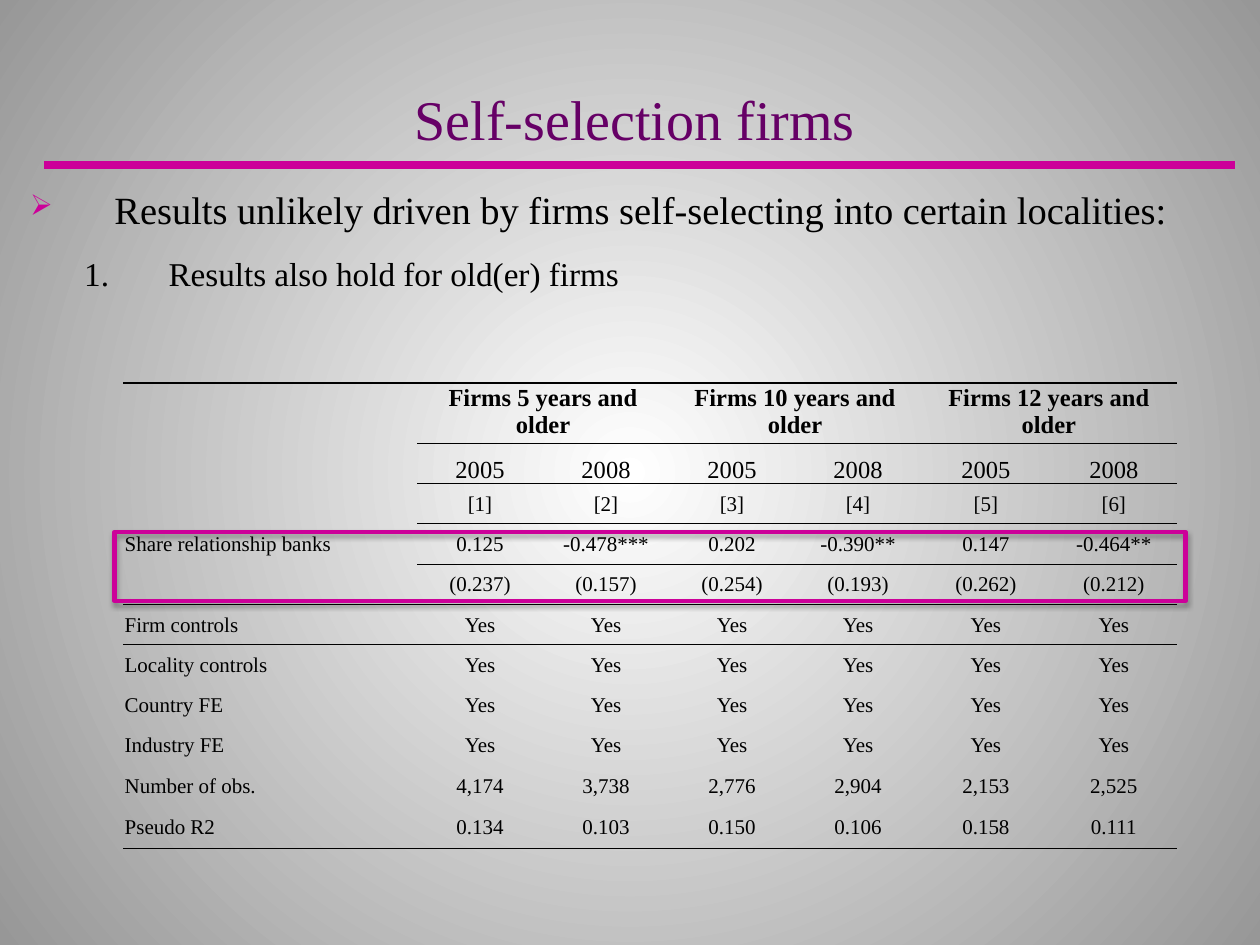
from lxml import etree
from pptx import Presentation
from pptx.dml.color import RGBColor
from pptx.enum.shapes import MSO_CONNECTOR as CONN, MSO_SHAPE as SHAPE
from pptx.enum.text import MSO_ANCHOR as ANCHOR, PP_ALIGN as ALIGN
from pptx.oxml.ns import qn
from pptx.util import Inches, Pt

COLORS = {
    "text": "000000",
    "title": "660066",
    "accent": "CC0099",
    "center": "FFFFFF",
    "edge": "979797",
}
PLAIN_TABLE = "{2D5ABB26-0587-4C30-8999-92F81FD0307C}"


def rgb(name):
    return RGBColor.from_string(COLORS[name])


def sub(parent, tag, **attrs):
    return etree.SubElement(parent, qn(tag), {k: str(v) for k, v in attrs.items()})


def solid(parent, name):
    return sub(sub(parent, "a:solidFill"), "a:srgbClr", val=COLORS[name])


class SlideBuilder:
    """Holds the font and the current slide; one method per kind of element."""

    def __init__(self, slide, font="Times New Roman"):
        self.s = slide
        self.font = font

    def background(self):
        fill = self.s.background.fill
        fill.gradient()
        for stop, name in zip(fill.gradient_stops, ("center", "edge")):
            stop.color.rgb = rgb(name)
        grad = self.s.element.find(".//" + qn("a:gradFill"))
        grad.remove(grad.find(qn("a:lin")))
        circle = sub(grad, "a:path", path="circle")
        sub(circle, "a:fillToRect", l=50000, t=50000, r=50000, b=50000)

    def run(self, p, text, size, color="text", bold=False):
        r = p.add_run()
        r.text = text
        r.font.name = self.font
        r.font.size = Pt(size)
        r.font.bold = bold
        r.font.color.rgb = rgb(color)

    def text_box(self, x, y, w, h, anchor=ANCHOR.TOP):
        sp = self.s.shapes.add_textbox(Inches(x), Inches(y), Inches(w), Inches(h))
        tf = sp.text_frame
        tf.word_wrap = True
        tf.vertical_anchor = anchor
        return tf

    def list_item(self, p, text, size, left, before, after=0, char=None):
        """A hanging item: bulleted when char is given, else numbered."""
        p.line_spacing = 1.1
        p.space_before, p.space_after = Pt(before), Pt(after)
        pPr = p._p.get_or_add_pPr()
        pPr.set("marL", str(Inches(left)))
        pPr.set("indent", str(Inches(-0.67)))
        if char:
            sub(sub(pPr, "a:buClr"), "a:srgbClr", val=COLORS["accent"])
            sub(pPr, "a:buSzPct", val=75000)
            sub(pPr, "a:buChar", char=char)
        else:
            sub(pPr, "a:buAutoNum", type="arabicPeriod")
        self.run(p, text, size)

    def rule(self, x1, y1, x2, y2, width):
        line = self.s.shapes.add_connector(
            CONN.STRAIGHT, Inches(x1), Inches(y1), Inches(x2), Inches(y2))
        line.line.color.rgb = rgb("accent")
        line.line.width = Pt(width)
        sub(line._element.spPr, "a:effectLst")

    def frame(self, x, y, w, h, width):
        sp = self.s.shapes.add_shape(
            SHAPE.RECTANGLE, Inches(x), Inches(y), Inches(w), Inches(h))
        sp.fill.background()
        sp.line.color.rgb = rgb("accent")
        sp.line.width = Pt(width)
        sp.shadow.inherit = False
        effects = sp._element.spPr.find(qn("a:effectLst"))
        shadow = sub(effects, "a:outerShdw", blurRad=Pt(3.1), dist=Pt(1.8),
                     dir=90 * 60000, rotWithShape=0)
        sub(sub(shadow, "a:srgbClr", val=COLORS["text"]), "a:alpha", val=35000)

    def table(self, x, y, widths, heights):
        sp = self.s.shapes.add_table(
            len(heights), len(widths), Inches(x), Inches(y),
            Inches(sum(widths)), Inches(sum(heights)))
        table = sp.table
        table.first_row = table.horz_banding = False
        table._tbl.tblPr.find(qn("a:tableStyleId")).text = PLAIN_TABLE
        for col, w in zip(table.columns, widths):
            col.width = Inches(w)
        for row, h in zip(table.rows, heights):
            row.height = Inches(h)
        return table

    def cell(self, cell, text, size, anchor, align, bold, top, bottom):
        cell.margin_left = cell.margin_right = cell.margin_top = Inches(0.01)
        cell.margin_bottom = 0
        cell.vertical_anchor = anchor
        p = cell.text_frame.paragraphs[0]
        p.alignment = align
        p.font.size = Pt(size)
        if text:
            self.run(p, text, size, bold=bold)
        tcPr = cell._tc.get_or_add_tcPr()
        for tag, width in (("a:lnT", top), ("a:lnB", bottom)):
            if width:
                solid(sub(tcPr, tag, w=Pt(width)), "text")
        cell.fill.background()


# Table content
YES = ["Yes"] * 6
ROWS = [
    ["", "Firms 5 years and older", "", "Firms 10 years and older", "",
     "Firms 12 years and older", ""],
    [""] + ["2005", "2008"] * 3,
    [""] + [f"[{n}]" for n in range(1, 7)],
    ["Share relationship banks", "0.125", "-0.478***", "0.202", "-0.390**",
     "0.147", "-0.464**"],
    ["", "(0.237)", "(0.157)", "(0.254)", "(0.193)", "(0.262)", "(0.212)"],
    ["Firm controls"] + YES,
    ["Locality controls"] + YES,
    ["Country FE"] + YES,
    ["Industry FE"] + YES,
    ["Number of obs.", "4,174", "3,738", "2,776", "2,904", "2,153", "2,525"],
    ["Pseudo R2", "0.134", "0.103", "0.150", "0.106", "0.158", "0.111"],
]
WIDTHS = [2.33, 1, 1, 1, 1, 1.03, 1]
HEIGHTS = [0.39] + [0.32] * 9 + [0.34]
ANCHORS = {0: ANCHOR.TOP, 1: ANCHOR.BOTTOM}
# Rules by the row boundary they lie on; the first three inner ones skip column 0
RULES = {0: 1, 1: 0.5, 2: 0.5, 3: 0.5, 5: 0.5, len(ROWS): 1}


def rule_width(boundary, col):
    return 0 if col == 0 and boundary in (1, 2, 3) else RULES.get(boundary, 0)


def results_table(b):
    table = b.table(0.98, 3.04, WIDTHS, HEIGHTS)
    for i, row in enumerate(ROWS):
        for j, text in enumerate(row):
            b.cell(table.cell(i, j), text,
                   size=14 if i < 2 and j else 12,
                   anchor=ANCHORS.get(i, ANCHOR.MIDDLE),
                   align=ALIGN.CENTER if j else ALIGN.LEFT,
                   bold=i == 0,
                   top=rule_width(i, j), bottom=rule_width(i + 1, j))
    for j in (1, 3, 5):
        table.cell(0, j).merge(table.cell(0, j + 1))


def main():
    prs = Presentation()
    prs.slide_width, prs.slide_height = Inches(10), Inches(7.5)
    b = SlideBuilder(prs.slides.add_slide(prs.slide_layouts[6]))
    b.background()

    # Body text
    tf = b.text_box(0.14, 1.39, 9.73, 5.98)
    b.list_item(tf.paragraphs[0],
                "Results unlikely driven by firms self-selecting into certain localities:",
                22, left=0.67, before=12, after=6, char="➢")
    b.list_item(tf.add_paragraph(), "Results also hold for old(er) firms",
                19, left=1.1, before=4)

    # Title and its rule
    p = b.text_box(0.33, 0.25, 9.42, 1, ANCHOR.BOTTOM).paragraphs[0]
    p.alignment = ALIGN.CENTER
    b.run(p, "Self-selection firms", 32, "title")
    b.rule(0.35, 1.31, 9.8, 1.31, 4.5)

    # Results and the highlighted rows
    results_table(b)
    b.frame(0.91, 4.22, 8.5, 0.55, 2.5)

    prs.save("out.pptx")


if __name__ == "__main__":
    main()
